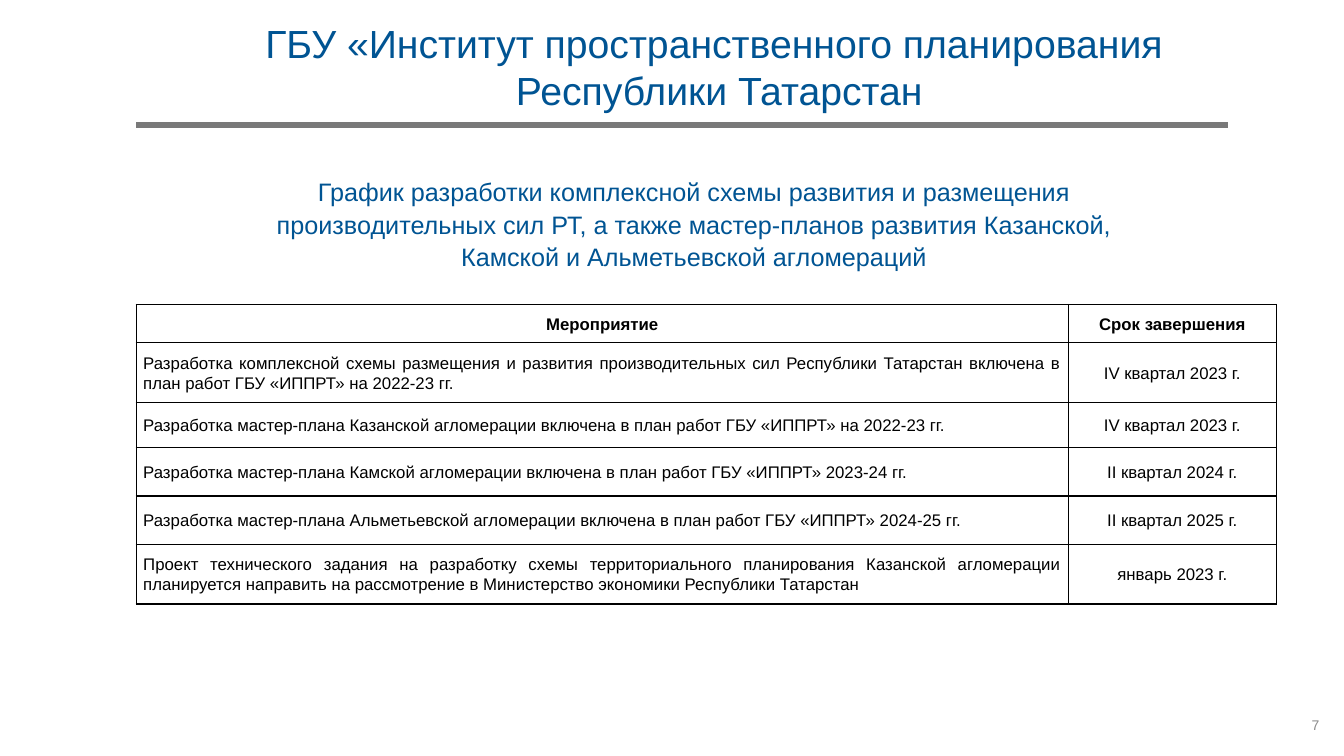
from lxml.etree import SubElement
from pptx import Presentation
from pptx.dml.color import RGBColor
from pptx.enum.shapes import MSO_CONNECTOR
from pptx.enum.text import MSO_ANCHOR, MSO_AUTO_SIZE, PP_ALIGN
from pptx.oxml import parse_xml
from pptx.oxml.ns import nsdecls, qn
from pptx.util import Cm, Pt


def color(value):
    return RGBColor.from_string(value)


def write(text_frame, lines, size, fill, alignment=PP_ALIGN.CENTER, spacing=1.0, bold=False):
    text_frame.text = "\n".join(lines)
    text_frame.word_wrap = True
    for paragraph in text_frame.paragraphs:
        for name, value in {"alignment": alignment, "line_spacing": spacing}.items():
            setattr(paragraph, name, value)
        font = paragraph.runs[0].font
        for name, value in {"name": "Arial", "size": Pt(size), "bold": bold}.items():
            setattr(font, name, value)
        font.color.rgb = color(fill)


presentation = Presentation()
presentation.slide_width = Cm(33.87)
presentation.slide_height = Cm(19.05)
slide = presentation.slides.add_slide(presentation.slide_layouts[5])

rule = slide.shapes.add_connector(MSO_CONNECTOR.STRAIGHT, Cm(3.43), Cm(3.15), Cm(30.94), Cm(3.15))
rule.line.color.rgb = color("797979")
rule.line.width = Pt(4)
SubElement(rule._element.spPr, qn("a:effectLst"))

title = slide.shapes.title
title_format = {"left": Cm(3), "top": Cm(0.33), "width": Cm(30.25), "height": Cm(2.67)}
for name, value in title_format.items():
    setattr(title, name, value)
title_frame = title.text_frame
title_frame.auto_size = MSO_AUTO_SIZE.NONE
title_frame.vertical_anchor = MSO_ANCHOR.MIDDLE
for side in ("left", "right", "top", "bottom"):
    setattr(title_frame, f"margin_{side}", Cm(0.15))
title_lines = ["ГБУ «Институт пространственного планирования ", "Республики Татарстан"]
write(title_frame, title_lines, 28, "005493")

page_number = slide.shapes.add_textbox(Cm(32.79), Cm(17.93), Cm(0.61), Cm(0.86))
page_number.text_frame.margin_left = page_number.text_frame.margin_right = Cm(0.15)
write(page_number.text_frame, ["7"], 10, "8C8C8C", PP_ALIGN.RIGHT)

subtitle = slide.shapes.add_textbox(Cm(6.3), Cm(4.27), Cm(22.38), Cm(2.72))
subtitle_text = (
    "График разработки комплексной схемы развития и размещения производительных сил РТ, "
    "а также мастер-планов развития Казанской, Камской и Альметьевской агломераций"
)
write(subtitle.text_frame, [subtitle_text], 18, "005493", spacing=1.07)

schedule = [
    ("Мероприятие", "Срок завершения"),
    (
        "Разработка комплексной схемы размещения и развития производительных сил "
        "Республики Татарстан включена в план работ ГБУ «ИППРТ» на 2022-23 гг.",
        "IV квартал 2023 г.",
    ),
    (
        "Разработка мастер-плана Казанской агломерации включена в план работ ГБУ «ИППРТ» на 2022-23 гг.",
        "IV квартал 2023 г.",
    ),
    (
        "Разработка мастер-плана Камской агломерации включена в план работ ГБУ «ИППРТ» 2023-24 гг.",
        "II квартал 2024 г.",
    ),
    (
        "Разработка мастер-плана Альметьевской агломерации включена в план работ ГБУ «ИППРТ» 2024-25 гг.",
        "II квартал 2025 г.",
    ),
    (
        "Проект технического задания на разработку схемы территориального планирования "
        "Казанской агломерации планируется направить на рассмотрение в Министерство "
        "экономики Республики Татарстан",
        "январь 2023 г.",
    ),
]
column_widths = [23.5, 5.23]
row_heights = [0.97, 1.5, 1.14, 1.22, 1.22, 1.5]
table = slide.shapes.add_table(
    len(schedule), len(column_widths), Cm(3.43), Cm(7.67), Cm(sum(column_widths)), Cm(sum(row_heights))
).table
for column, width in zip(table.columns, column_widths):
    column.width = Cm(width)
for row, height in zip(table.rows, row_heights):
    row.height = Cm(height)

cell_format = {
    "vertical_anchor": MSO_ANCHOR.MIDDLE,
    "margin_left": Cm(0.18),
    "margin_right": Cm(0.18),
    "margin_top": Cm(0),
    "margin_bottom": Cm(0),
}
for row_index, entry in enumerate(schedule):
    for column_index, text in enumerate(entry):
        cell = table.cell(row_index, column_index)
        for name, value in cell_format.items():
            setattr(cell, name, value)
        is_header = row_index == 0
        is_task = column_index == 0 and not is_header
        alignment = PP_ALIGN.JUSTIFY if is_task else PP_ALIGN.CENTER
        write(cell.text_frame, [text], 12, "000000", alignment, 1.07, is_header)
        properties = cell._tc.get_or_add_tcPr()
        for edge in ("lnL", "lnR", "lnT", "lnB"):
            properties.append(parse_xml(
                f'<a:{edge} {nsdecls("a")} w="{Pt(1)}"><a:solidFill>'
                f'<a:srgbClr val="000000"/></a:solidFill></a:{edge}>'
            ))
        cell.fill.solid()
        cell.fill.fore_color.rgb = color("FFFFFF")

presentation.save("out.pptx")
